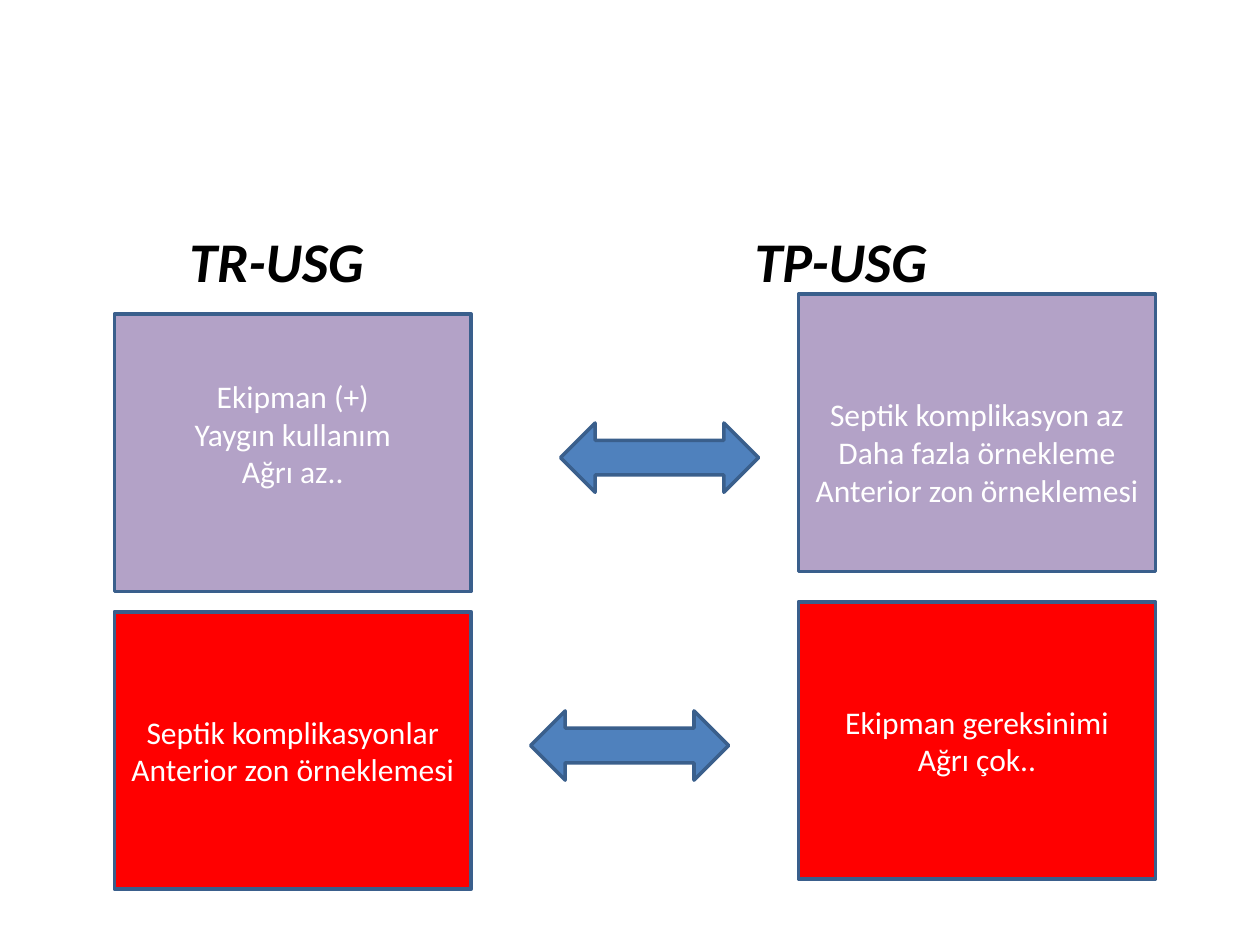
import dataclasses

import lxml.etree
import pptx
import pptx.dml.color
import pptx.enum.shapes
import pptx.enum.text
import pptx.oxml.ns
import pptx.util

Pt = pptx.util.Pt
RGBColor = pptx.dml.color.RGBColor
Shapes = pptx.enum.shapes.MSO_SHAPE

BLACK = RGBColor(0x00, 0x00, 0x00)
WHITE = RGBColor(0xFF, 0xFF, 0xFF)
LILAC = RGBColor(0xB3, 0xA2, 0xC7)
RED = RGBColor(0xFF, 0x00, 0x00)
BLUE = RGBColor(0x4F, 0x81, 0xBD)
OUTLINE = RGBColor(0x3A, 0x5F, 0x8C)

TWO_CONTENT_LAYOUT = 3
BOX_SIZE = (204, 158.5)
ARROW_SIZE = (113.2, 39.6)
LEFT_COLUMN, RIGHT_COLUMN = 65.3, 456.3
INSET = 3.6
SHIFTED_INSET = INSET + 22  # one text line more than the usual inset

HEADING_FONT = {"name": "Calibri", "size": Pt(32), "bold": True, "italic": True}
BOX_FONT = {"name": "Calibri", "size": Pt(18)}


@dataclasses.dataclass(frozen=True)
class Heading:
    placeholder: int
    left: float
    text: str


@dataclasses.dataclass(frozen=True)
class Box:
    left: float
    top: float
    fill: RGBColor
    lines: tuple[str, ...]
    inset_top: float = INSET
    inset_bottom: float = INSET


@dataclasses.dataclass(frozen=True)
class Arrow:
    left: float
    top: float


HEADINGS = (Heading(1, 101, "TR-USG"), Heading(2, 424, "TP-USG"))
BOXES = (
    Box(LEFT_COLUMN, 179.5, LILAC,
        ("Ekipman (+)", "Yaygın kullanım", "Ağrı az.."),
        inset_bottom=SHIFTED_INSET),
    Box(RIGHT_COLUMN, 168, LILAC,
        ("Septik komplikasyon az", "Daha fazla örnekleme", "Anterior zon örneklemesi"),
        inset_top=SHIFTED_INSET),
    Box(LEFT_COLUMN, 349.6, RED,
        ("Septik komplikasyonlar", "Anterior zon örneklemesi")),
    Box(RIGHT_COLUMN, 343.9, RED,
        ("Ekipman gereksinimi", "Ağrı çok..")),
)
ARROWS = (Arrow(320.3, 241.7), Arrow(303.2, 406.2))


def apply_values(target, values: dict) -> None:
    for name, value in values.items():
        setattr(target, name, value)


def add_heading(slide, heading: Heading) -> None:
    """Fill a body placeholder with an unbulleted column heading."""
    body = slide.placeholders[heading.placeholder]
    apply_values(body, {"left": Pt(heading.left), "top": Pt(126),
                        "width": Pt(200), "height": Pt(50)})
    paragraph = body.text_frame.paragraphs[0]
    run = paragraph.add_run()
    run.text = heading.text
    apply_values(run.font, HEADING_FONT)
    run.font.color.rgb = BLACK

    properties = paragraph._p.get_or_add_pPr()
    properties.set("marL", "0")
    properties.set("indent", "0")
    lxml.etree.SubElement(properties, pptx.oxml.ns.qn("a:buNone"))


def add_outlined_shape(slide, kind, left: float, top: float,
                       size: tuple[float, float], fill: RGBColor):
    shape = slide.shapes.add_shape(kind, Pt(left), Pt(top), *map(Pt, size))
    shape.shadow.inherit = False
    shape.fill.solid()
    shape.fill.fore_color.rgb = fill
    shape.line.color.rgb = OUTLINE
    shape.line.width = Pt(2)
    return shape


def add_box(slide, box: Box) -> None:
    shape = add_outlined_shape(slide, Shapes.RECTANGLE, box.left, box.top,
                               BOX_SIZE, box.fill)
    frame = shape.text_frame
    apply_values(frame, {
        "word_wrap": True,
        "vertical_anchor": pptx.enum.text.MSO_ANCHOR.MIDDLE,
        "margin_top": Pt(box.inset_top),
        "margin_bottom": Pt(box.inset_bottom),
    })
    frame.text = "\n".join(box.lines)
    for paragraph in frame.paragraphs:
        paragraph.alignment = pptx.enum.text.PP_ALIGN.CENTER
        for run in paragraph.runs:
            apply_values(run.font, BOX_FONT)
            run.font.color.rgb = WHITE


def main() -> None:
    presentation = pptx.Presentation()
    apply_values(presentation, {"slide_width": Pt(720), "slide_height": Pt(540)})
    layout = presentation.slide_layouts[TWO_CONTENT_LAYOUT]
    slide = presentation.slides.add_slide(layout)
    title = slide.shapes.title._element
    title.getparent().remove(title)

    for heading in HEADINGS:
        add_heading(slide, heading)
    for box in BOXES:
        add_box(slide, box)
    for arrow in ARROWS:
        add_outlined_shape(slide, Shapes.LEFT_RIGHT_ARROW, arrow.left, arrow.top,
                           ARROW_SIZE, BLUE)
    presentation.save("out.pptx")


if __name__ == "__main__":
    main()
